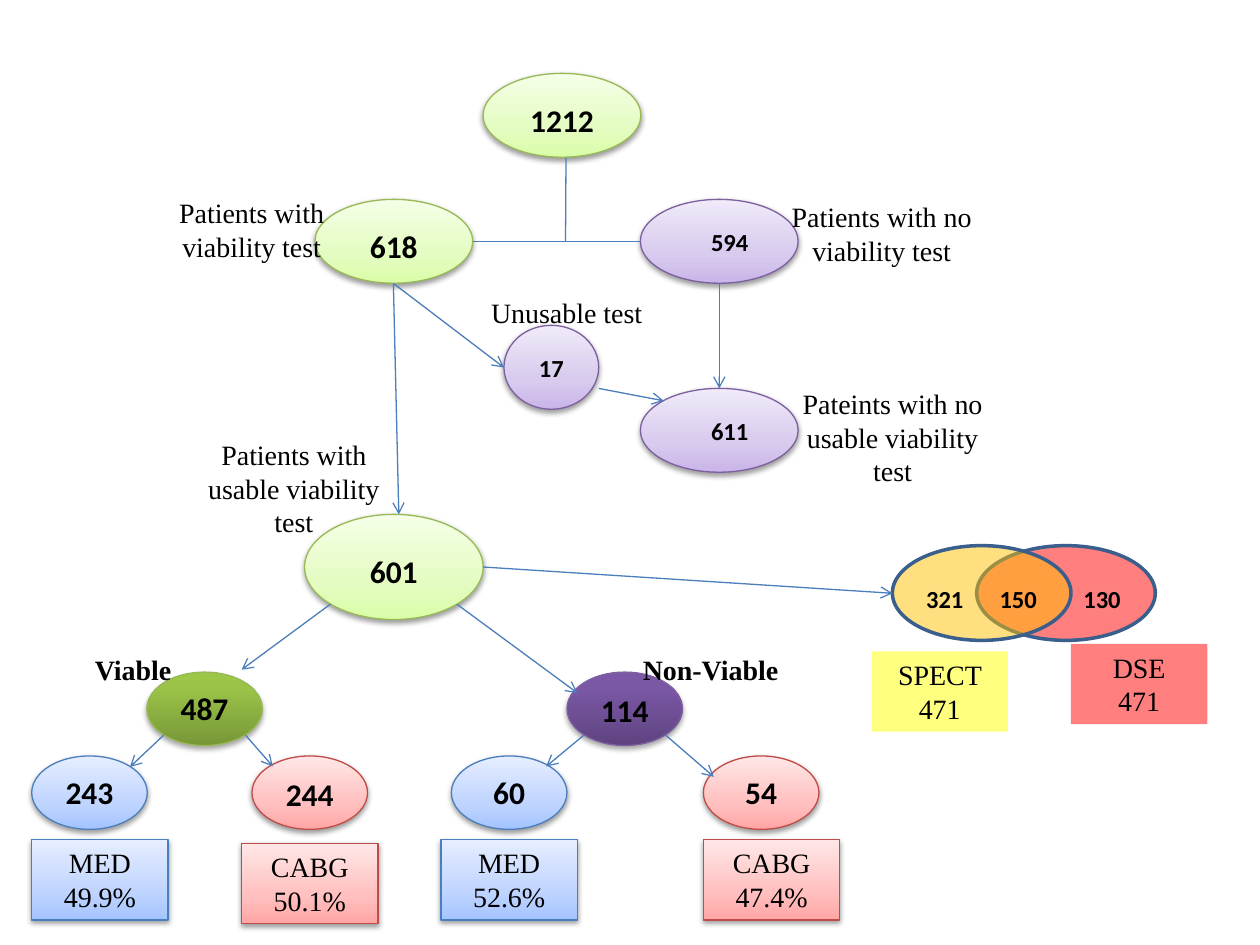
from dataclasses import dataclass

import lxml.etree
import pptx
import pptx.dml.color
import pptx.enum.shapes
import pptx.enum.text
import pptx.oxml.ns
import pptx.util

Cm = pptx.util.Cm
Pt = pptx.util.Pt
qn = pptx.oxml.ns.qn
SHAPES = pptx.enum.shapes.MSO_SHAPE
ALIGN = pptx.enum.text.PP_ALIGN
ANCHOR = pptx.enum.text.MSO_ANCHOR
SERIF = "Times New Roman"


@dataclass(frozen=True)
class Theme:
    stops: tuple
    outline: str
    shadow_alpha: int = 38000
    shadow_distance: int = 20000


@dataclass(frozen=True)
class Node:
    """Ellipse with a patient count; all lengths in cm."""
    count: str
    left: float
    top: float
    width: float
    height: float
    theme: Theme
    size: int = 18
    count_drop: float = 0.42
    count_shift: float = 0


@dataclass(frozen=True)
class Box:
    text: str
    left: float
    top: float
    fill: object  # a Theme, or a hex colour drawn half transparent


@dataclass(frozen=True)
class Label:
    text: str
    left: float
    top: float
    height: float
    bold: bool = False


PALE = (0, 35, 100)
DEEP = (0, 80, 100)
GREEN = Theme(tuple(zip(PALE, ("DAFDA7", "E4FCC2", "F5FFE7"))), "98B955")
PURPLE = Theme(tuple(zip(PALE, ("C9B5E8", "D8CBEE", "F0EAF9"))), "7D60A0")
BLUE = Theme(tuple(zip(PALE, ("A4C4FF", "BFD4FF", "E6EEFF"))), "4B7EBC")
RED = Theme(tuple(zip(PALE, ("FFA6A5", "FFC0BF", "FFE7E7"))), "BF4C48")
DEEP_GREEN = Theme(tuple(zip(DEEP, ("779737", "9BC348", "9DC746"))), "98B955", 35000, 23000)
DEEP_PURPLE = Theme(tuple(zip(DEEP, ("5F4480", "7B58A6", "7C57A8"))), "7D60A0", 35000, 23000)

LARGE = (3.18, 1.69)
SMALL = (2.33, 1.48)
NODES = [
    Node("1212", 9.74, 1.48, *LARGE, GREEN),
    Node("618", 6.35, 4.02, *LARGE, GREEN),
    Node("594", 12.91, 4.02, *LARGE, PURPLE, 14, count_shift=0.21),
    Node("17", 10.16, 6.56, 1.91, 1.69, PURPLE, 14),
    Node("611", 12.91, 7.83, *LARGE, PURPLE, 14, count_shift=0.21),
    Node("601", 6.14, 10.37, 3.6, 2.12, GREEN, count_drop=0.63),
    Node("487", 2.96, 13.55, *SMALL, DEEP_GREEN, count_drop=0.21),
    Node("114", 11.43, 13.55, *SMALL, DEEP_PURPLE, count_drop=0.25),
    Node("244", 5.08, 15.24, *SMALL, RED, count_drop=0.25),
    Node("243", 0.64, 15.24, *SMALL, BLUE, count_drop=0.21),
    Node("60", 9.1, 15.24, *SMALL, BLUE, count_drop=0.21),
    Node("54", 14.18, 15.24, *SMALL, RED, count_drop=0.21),
]
VENN_CIRCLES = [(19.69, "FF0000"), (17.99, "FFC000")]
VENN_COUNTS = [("321", 18.42), ("150", 19.9), ("130", 21.59)]
BOXES = [
    Box("SPECT 471", 17.57, 13.13, "FFFF00"),
    Box("DSE\n471", 21.59, 12.98, "FF0000"),
    Box("MED\n49.9%", 0.64, 16.93, BLUE),
    Box("MED\n52.6%", 8.89, 16.93, BLUE),
    Box("CABG 50.1%", 4.87, 17, RED),
    Box("CABG 47.4%", 14.18, 16.93, RED),
]
LABELS = [
    Label("Patients with viability test", 2.96, 3.81, 1.62),
    Label("Patients with usable viability test", 3.81, 8.68, 2.32),
    Label("Pateints with no usable viability test", 15.88, 7.65, 2.32),
    Label("Patients with no viability test", 15.66, 3.89, 1.62),
    Label("Unusable test", 9.31, 5.84, 0.93),
    Label("Viable ", 0.64, 13.03, 0.93, bold=True),
    Label("Non-Viable ", 12.28, 13.03, 0.93, bold=True),
]
PLAIN_LINES = [(9.53, 4.87, 12.91, 4.87), (11.41, 3.18, 11.4, 4.87)]
ARROWS = [
    (14.5, 5.72, 14.5, 7.83),
    (7.94, 5.72, 10.16, 7.41),
    (12.07, 7.83, 13.38, 8.08),
    (7.93, 5.72, 8.04, 10.37),
    (6.66, 12.18, 4.87, 13.5),
    (9.21, 12.18, 11.64, 13.97),
    (3.3, 14.82, 2.62, 15.46),
    (4.95, 14.82, 5.5, 15.45),
    (11.77, 14.82, 11.01, 15.45),
    (13.42, 14.82, 14.39, 15.66),
    (9.74, 11.43, 17.99, 11.96),
]


def color(hex_value: str) -> pptx.dml.color.RGBColor:
    return pptx.dml.color.RGBColor.from_string(hex_value)


def add_child(parent, tag: str, **attributes):
    return lxml.etree.SubElement(parent, qn(tag), {k: str(v) for k, v in attributes.items()})


def write(shape, text: str, *, font: str = SERIF, size: int = 16, bold: bool = False,
          align=ALIGN.CENTER, anchor=ANCHOR.TOP) -> None:
    frame = shape.text_frame
    frame.word_wrap = True
    frame.auto_size = pptx.enum.text.MSO_AUTO_SIZE.SHAPE_TO_FIT_TEXT
    frame.vertical_anchor = anchor
    frame.text = text
    for paragraph in frame.paragraphs:
        paragraph.alignment = align
        style = paragraph.runs[0].font
        style.name, style.size, style.bold = font, Pt(size), bold
        style.color.rgb = color("000000")


def paint_theme(shape, theme: Theme) -> None:
    shape.fill.gradient()
    shape.fill.gradient_angle = 90
    stops = shape._element.spPr.find(qn("a:gradFill")).find(qn("a:gsLst"))
    stops[:] = []
    for position, value in theme.stops:
        add_child(add_child(stops, "a:gs", pos=position * 1000), "a:srgbClr", val=value)
    shape.line.color.rgb = color(theme.outline)
    shape.line.width = Pt(0.75)
    effects = shape._element.spPr.find(qn("a:effectLst"))
    shadow = add_child(effects, "a:outerShdw", blurRad=40000, dist=theme.shadow_distance,
                       dir=5400000, rotWithShape=0)
    add_child(add_child(shadow, "a:srgbClr", val="000000"), "a:alpha", val=theme.shadow_alpha)


def draw_shape(slide, kind, left: float, top: float, width: float, height: float, fill):
    shape = slide.shapes.add_shape(kind, Cm(left), Cm(top), Cm(width), Cm(height))
    shape.shadow.inherit = False
    if isinstance(fill, Theme):
        paint_theme(shape, fill)
    else:
        shape.fill.solid()
        shape.fill.fore_color.rgb = color(fill)
        add_child(shape._element.spPr.find(qn("a:solidFill"))[0], "a:alpha", val=50000)
        shape.line.fill.background()
    return shape


def draw_text(slide, text: str, left: float, top: float, width: float, height: float,
              **style) -> None:
    write(slide.shapes.add_textbox(Cm(left), Cm(top), Cm(width), Cm(height)), text, **style)


def draw_line(slide, ends: tuple, arrow: bool) -> None:
    connector = slide.shapes.add_connector(
        pptx.enum.shapes.MSO_CONNECTOR.STRAIGHT, *(Cm(value) for value in ends))
    connector.line.color.rgb = color("4B7EBC")
    connector.line.width = Pt(0.75)
    if arrow:
        add_child(connector.line._get_or_add_ln(), "a:tailEnd", type="arrow")
    add_child(connector._element.spPr, "a:effectLst")


def main() -> None:
    deck = pptx.Presentation()
    deck.slide_width, deck.slide_height = Cm(25.4), Cm(19.05)
    slide = deck.slides.add_slide(deck.slide_layouts[6])

    # Patient groups
    for node in NODES:
        draw_shape(slide, SHAPES.OVAL, node.left, node.top, node.width, node.height, node.theme)

    # Overlap of the two viability tests
    for left, fill in VENN_CIRCLES:
        circle = draw_shape(slide, SHAPES.OVAL, left, 11, 3.6, 1.91, fill)
        circle.line.color.rgb = color("3A5F8C")
        circle.line.width = Pt(2)
    for count, left in VENN_COUNTS:
        draw_text(slide, count, left, 11.64, 1.27, 0.87, font="Calibri", size=14, bold=True,
                  align=ALIGN.LEFT)

    # Counts, treatment boxes and labels
    for node in NODES:
        left = node.left + (node.width - 1.91) / 2 + node.count_shift
        draw_text(slide, node.count, left, node.top + node.count_drop, 1.91,
                  1.02 if node.size == 18 else 0.87,
                  font="Calibri", size=node.size, bold=True, anchor=ANCHOR.MIDDLE)
    for box in BOXES:
        write(draw_shape(slide, SHAPES.RECTANGLE, box.left, box.top, 2.75, 1.62, box.fill), box.text)
    for label in LABELS:
        draw_text(slide, label.text, label.left, label.top, 4.23, label.height,
                  bold=label.bold, anchor=ANCHOR.MIDDLE)

    # Flow
    for ends in PLAIN_LINES:
        draw_line(slide, ends, arrow=False)
    for ends in ARROWS:
        draw_line(slide, ends, arrow=True)

    deck.save("out.pptx")


if __name__ == "__main__":
    main()
